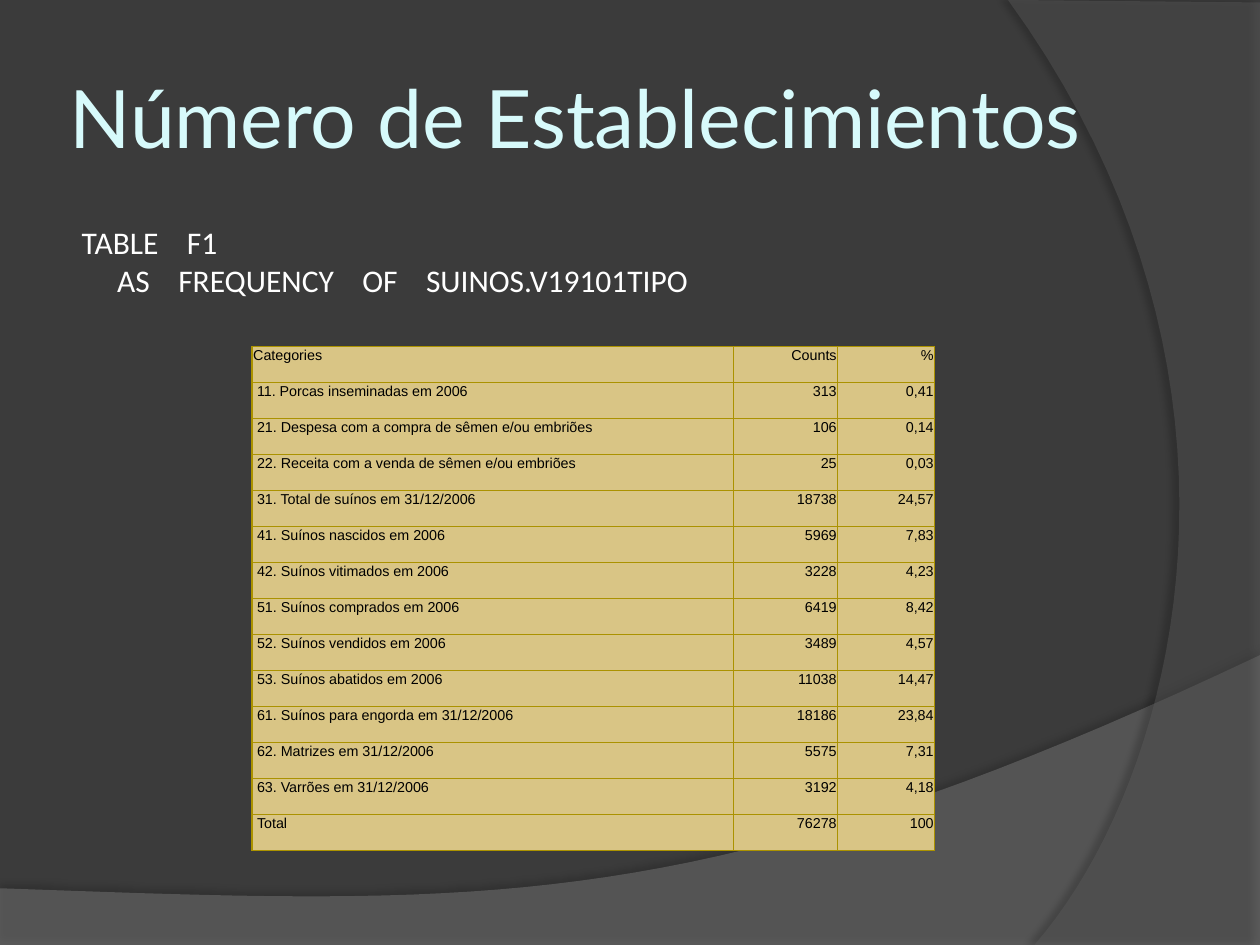
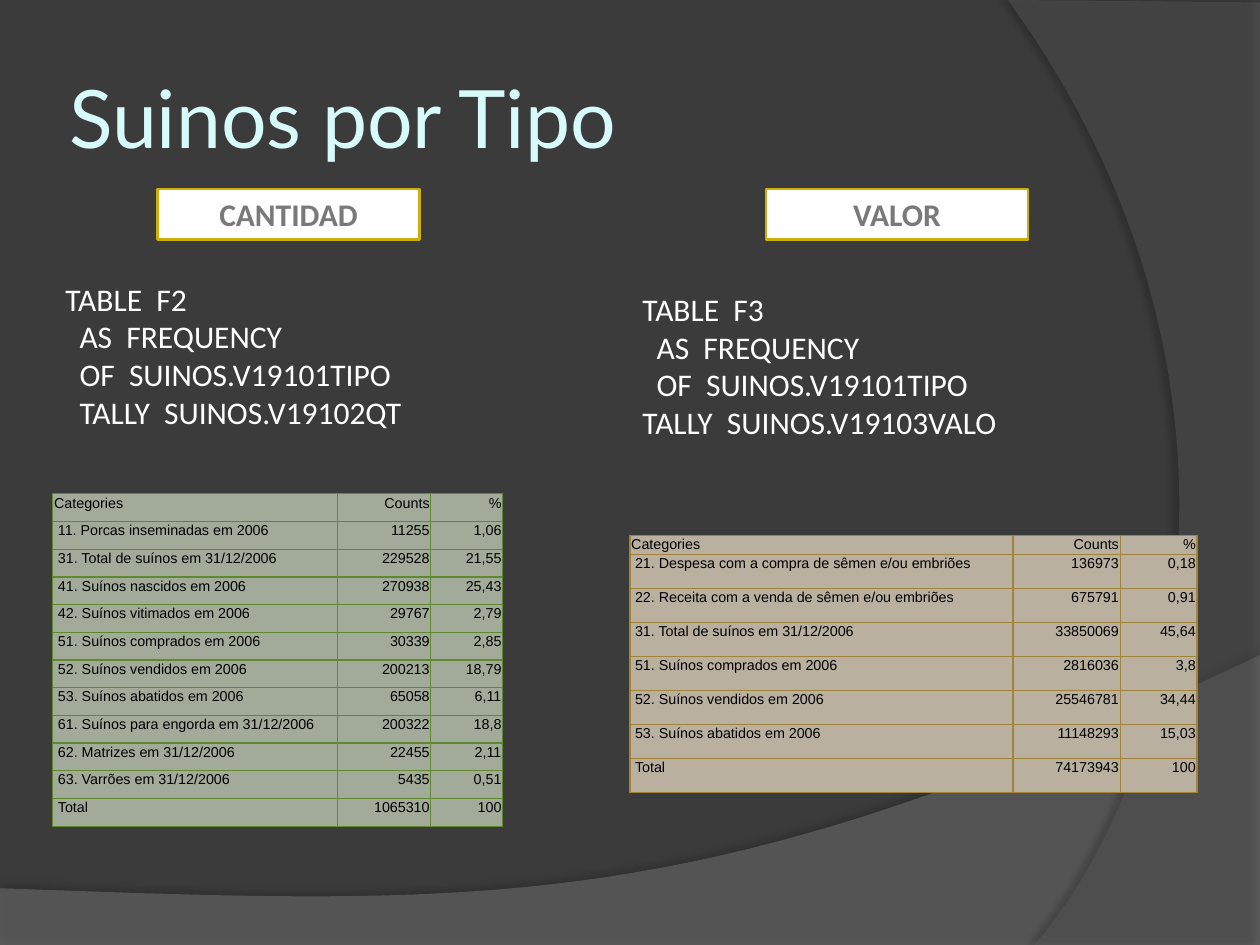
from lxml.etree import SubElement as Sub
from pptx import Presentation
from pptx.dml.color import RGBColor as Rgb
from pptx.enum.shapes import MSO_SHAPE as Kind
from pptx.enum.text import MSO_ANCHOR as Anchor, PP_ALIGN as Align
from pptx.oxml.ns import qn
from pptx.util import Inches, Pt

HUES = {
    "back": "3B3B3B", "wave": "7F7F7F", "arc": "5E5E5E", "shade": "000000",
    "title": "D7FAFB", "white": "FFFFFF", "black": "000000",
    "label": "797979", "rim": "CCAF0A",
    "gold": "D9C585", "gold line": "AB9200",
    "green": "A2AB9A", "green line": "5F882F",
    "sand": "B9B09F", "sand line": "A1843A",
}
KINDS = {
    11: "Porcas inseminadas em 2006",
    21: "Despesa com a compra de sêmen e/ou embriões",
    22: "Receita com a venda de sêmen e/ou embriões",
    31: "Total de suínos em 31/12/2006",
    41: "Suínos nascidos em 2006",
    42: "Suínos vitimados em 2006",
    51: "Suínos comprados em 2006",
    52: "Suínos vendidos em 2006",
    53: "Suínos abatidos em 2006",
    61: "Suínos para engorda em 31/12/2006",
    62: "Matrizes em 31/12/2006",
    63: "Varrões em 31/12/2006",
}
FARMS = [
    (11, "313", "0,41"), (21, "106", "0,14"), (22, "25", "0,03"),
    (31, "18738", "24,57"), (41, "5969", "7,83"), (42, "3228", "4,23"),
    (51, "6419", "8,42"), (52, "3489", "4,57"), (53, "11038", "14,47"),
    (61, "18186", "23,84"), (62, "5575", "7,31"), (63, "3192", "4,18"),
    ("Total", "76278", "100"),
]
HEADS = [
    (11, "11255", "1,06"), (31, "229528", "21,55"), (41, "270938", "25,43"),
    (42, "29767", "2,79"), (51, "30339", "2,85"), (52, "200213", "18,79"),
    (53, "65058", "6,11"), (61, "200322", "18,8"), (62, "22455", "2,11"),
    (63, "5435", "0,51"), ("Total", "1065310", "100"),
]
WORTH = [
    (21, "136973", "0,18"), (22, "675791", "0,91"), (31, "33850069", "45,64"),
    (51, "2816036", "3,8"), (52, "25546781", "34,44"),
    (53, "11148293", "15,03"), ("Total", "74173943", "100"),
]


def hue(name):
    return Rgb.from_string(HUES[name])


def paint(item, name):
    item.fill.solid()
    item.fill.fore_color.rgb = hue(name)


def write(frame, text, font="Calibri", size=18, color="white", bold=False,
          align=Align.LEFT):
    frame.word_wrap = True
    for i, line in enumerate(text.split("\n")):
        para = frame.add_paragraph() if i else frame.paragraphs[0]
        para.alignment = align
        run = para.add_run()
        run.text = line
        run.font.name, run.font.size, run.font.bold = font, Pt(size), bold
        run.font.color.rgb = hue(color)


def place(shape, left, top, width, height):
    shape.left, shape.top = Inches(left), Inches(top)
    shape.width, shape.height = Inches(width), Inches(height)


def curve(a, b, c, d, steps=40):
    for i in range(1, steps + 1):
        t = i / steps
        u = 1 - t
        yield tuple(u**3 * p + 3 * u * u * t * q + 3 * u * t * t * r + t**3 * s
                    for p, q, r, s in zip(a, b, c, d))


def tint(node, alpha):
    Sub(node, qn("a:alpha")).set("val", str(alpha * 1000))


def sweep(slide, layout, spot, points, color, alpha, dark, dist, turn):
    dots = [(Inches(x), Inches(y)) for x, y in points]
    pen = slide.shapes.build_freeform(*dots[0])
    pen.add_line_segments(dots[1:])
    shape = pen.convert_to_shape()
    paint(shape, color)
    shape.line.fill.background()
    shape.shadow.inherit = False
    props = shape.element.spPr
    tint(props.find(".//" + qn("a:srgbClr")), alpha)
    glow = Sub(props.find(qn("a:effectLst")), qn("a:outerShdw"))
    marks = {"blurRad": Pt(4), "dist": Pt(dist), "dir": turn * 60000,
             "algn": "ctr", "rotWithShape": 0}
    for key, val in marks.items():
        glow.set(key, str(val))
    ink = Sub(glow, qn("a:srgbClr"))
    ink.set("val", HUES["shade"])
    tint(ink, dark)
    layout.shapes.element.insert(spot, shape.element)


def dress(slide, layout):
    fill = layout.background.fill
    fill.solid()
    fill.fore_color.rgb = hue("back")
    wave = [(0, 7.05), (0, 7.5), (10, 7.5), (10, 5.2)]
    wave += curve((10, 5.2), (5.59, 7.29), (3.91, 7.19), (0, 7.05))
    arc = [(10, 0.02), (10, 7.5), (8.21, 7.5)]
    arc += curve((8.21, 7.5), (9.35, 6.19), (10.18, 3), (8, 0))
    sweep(slide, layout, 2, wave, "wave", 45, 35, 3.5, 270)
    sweep(slide, layout, 3, arc, "arc", 40, 45, 4, 180)


def head(slide, text, width):
    title = slide.shapes.title
    place(title, 0.5, 0.3, width, 1.25)
    frame = title.text_frame
    frame.vertical_anchor = Anchor.MIDDLE
    frame.margin_left = frame.margin_right = Inches(0.05)
    write(frame, text, font="Lato", size=46, color="title")


def code(slide, text, *area):
    box = slide.shapes.add_textbox(*map(Inches, area))
    write(box.text_frame, text)


def badge(slide, text, left):
    box = slide.shapes.add_shape(
        Kind.RECTANGLE, *map(Inches, (left, 1.5, 2.08, 0.4)))
    box.shadow.inherit = False
    paint(box, "white")
    box.line.color.rgb = hue("rim")
    box.line.width = Pt(1.5)
    write(box.text_frame, text, color="label", bold=True, align=Align.CENTER)


def edge(cell, color):
    props = cell._tc.get_or_add_tcPr()
    for side in ("lnL", "lnR", "lnT", "lnB"):
        line = Sub(props, qn("a:" + side))
        line.set("w", str(Pt(0.75)))
        Sub(Sub(line, qn("a:solidFill")), qn("a:srgbClr")).set(
            "val", HUES[color])


def grid(slide, data, left, top, widths, step, color, first=None):
    rows = [("Categories", "Counts", "%")] + data
    high = [first or step] + [step] * len(data)
    area = map(Inches, (left, top, sum(widths), sum(high)))
    table = slide.shapes.add_table(len(rows), len(widths), *area).table
    table.first_row = table.horz_banding = False
    for col, width in zip(table.columns, widths):
        col.width = Inches(width)
    for r, row in enumerate(rows):
        table.rows[r].height = Inches(high[r])
        for c, item in enumerate(row):
            cell = table.cell(r, c)
            text = f"{item}. {KINDS[item]}" if item in KINDS else item
            cell.margin_left = Inches(0.04 if r and not c else 0.01)
            cell.margin_right = cell.margin_top = Inches(0.01)
            cell.margin_bottom = 0
            edge(cell, color + " line")
            paint(cell, color)
            write(cell.text_frame, text, font="Arial", size=8.2, color="black",
                  align=Align.RIGHT if c else Align.LEFT)


def main():
    deck = Presentation()
    deck.slide_width, deck.slide_height = Inches(10), Inches(7.5)
    layout = deck.slide_layouts[5]

    count = deck.slides.add_slide(layout)
    dress(count, layout)
    head(count, "Número de Establecimientos", 8.17)
    grid(count, FARMS, 2, 2.75, (3.82, 0.83, 0.77), 0.286, "gold")
    code(count, "TABLE    F1\n"
         "     AS    FREQUENCY    OF    SUINOS.V19101TIPO",
         0.55, 1.72, 6.09, 0.71)

    types = deck.slides.add_slide(layout)
    head(types, "Suinos por Tipo", 5.67)
    shared = "\n  AS  FREQUENCY\n  OF  SUINOS.V19101TIPO\n"
    code(types, "TABLE  F2" + shared + "  TALLY  SUINOS.V19102QT",
         0.42, 2.17, 3.92, 1.31)
    grid(types, HEADS, 0.42, 3.92, (2.26, 0.74, 0.57), 0.22, "green")
    grid(types, WORTH, 5, 4.25, (3.04, 0.85, 0.61), 0.27, "sand", first=0.15)
    code(types, "TABLE  F3" + shared + "TALLY  SUINOS.V19103VALO",
         5, 2.25, 4.42, 1.31)
    badge(types, "CANTIDAD", 1.25)
    badge(types, "VALOR", 6.08)

    deck.save("out.pptx")


if __name__ == "__main__":
    main()
